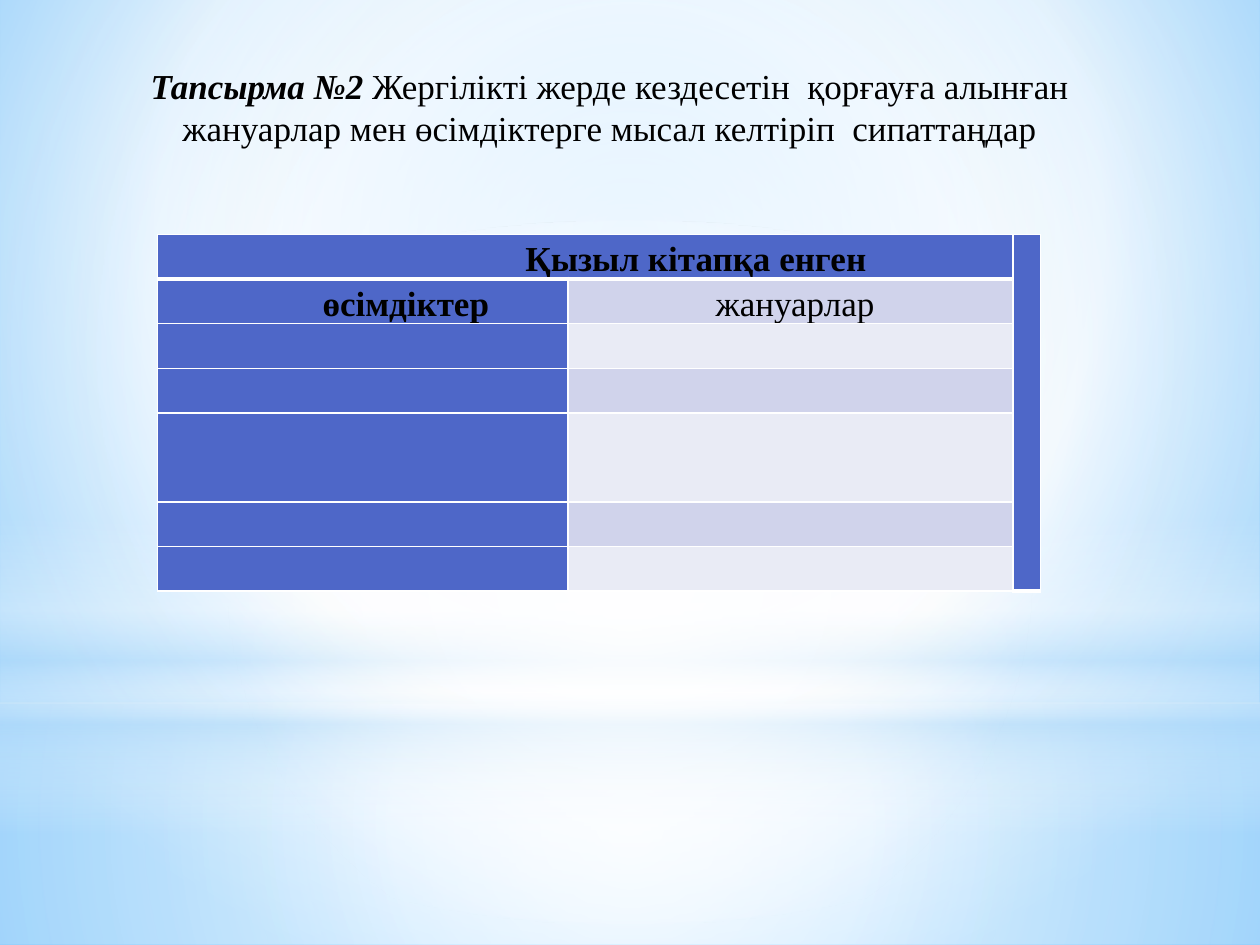
from dataclasses import dataclass

from lxml import etree
from pptx import Presentation
from pptx.dml.color import RGBColor
from pptx.enum.shapes import MSO_SHAPE
from pptx.enum.text import MSO_ANCHOR, MSO_AUTO_SIZE, PP_ALIGN
from pptx.oxml.ns import qn
from pptx.util import Inches, Pt

RECT, OVAL = MSO_SHAPE.RECTANGLE, MSO_SHAPE.OVAL
MIDDLE, CENTER, LEFT = MSO_ANCHOR.MIDDLE, PP_ALIGN.CENTER, PP_ALIGN.LEFT
GROW = MSO_AUTO_SIZE.SHAPE_TO_FIT_TEXT


@dataclass(frozen=True)
class Theme:
    font: str = "Times New Roman"
    size: int = 20
    text: str = "000000"
    white: str = "FFFFFF"
    haze: str = "B4DCFA"
    sky: str = "9ED5FF"
    deep_sky: str = "5BB9FF"
    header: str = "4E67C8"
    band_dark: str = "D0D3EB"
    band_light: str = "E9EBF5"
    grid_line: int = 1
    header_line: int = 3


THEME = Theme()
CENTRE_POINT = (50, 50, 50, 50)


def set_gradient(fill, holder, stops, focus=None):
    """Stops are (position %, colour, opacity %); without a focus it runs downwards."""
    fill.solid()
    solid = holder.find(".//" + qn("a:solidFill"))
    gradient = etree.Element(qn("a:gradFill"), rotWithShape="1")
    stop_list = etree.SubElement(gradient, qn("a:gsLst"))
    for position, color, opacity in stops:
        stop = etree.SubElement(stop_list, qn("a:gs"), pos=str(position * 1000))
        rgb = etree.SubElement(stop, qn("a:srgbClr"), val=color)
        if opacity < 100:
            etree.SubElement(rgb, qn("a:alpha"), val=str(opacity * 1000))
    if focus:
        circle = etree.SubElement(gradient, qn("a:path"), path="circle")
        sides = {side: str(share * 1000) for side, share in zip("ltrb", focus)}
        etree.SubElement(circle, qn("a:fillToRect"), **sides)
    else:
        etree.SubElement(gradient, qn("a:lin"), ang="5400000", scaled="0")
    solid.getparent().replace(solid, gradient)


def add_glow(slide, kind, top, height, stops, focus=CENTRE_POINT):
    glow = slide.shapes.add_shape(
        kind, 0, Inches(top), Inches(10), Inches(height))
    glow.shadow.inherit = False
    glow.line.fill.background()
    set_gradient(glow.fill, glow.element.spPr, stops, focus)


def add_text(paragraph, text, bold=False, italic=False, align=LEFT, spacing=None):
    paragraph.alignment = align
    if spacing:
        paragraph.line_spacing = spacing
    run = paragraph.add_run()
    run.text = text
    run.font.name, run.font.size = THEME.font, Pt(THEME.size)
    run.font.bold, run.font.italic = bold, italic
    run.font.color.rgb = RGBColor.from_string(THEME.text)


def style_cell(cell, color, bottom_width=THEME.grid_line):
    properties = cell._tc.get_or_add_tcPr()
    for side in "LRTB":
        width = bottom_width if side == "B" else THEME.grid_line
        line = etree.SubElement(properties, qn("a:ln" + side), w=str(Pt(width)))
        fill = etree.SubElement(line, qn("a:solidFill"))
        etree.SubElement(fill, qn("a:srgbClr"), val=THEME.white)
    cell.fill.solid()
    cell.fill.fore_color.rgb = RGBColor.from_string(color)
    cell.margin_left = cell.margin_right = Inches(0.07)
    cell.margin_top = cell.margin_bottom = 0


def label_cell(cell, text, indent, bold):
    cell.margin_left = Inches(0.07 + indent)
    add_text(cell.text_frame.paragraphs[0], text, bold=bold, spacing=1.15)


def add_backdrop(slide):
    white, haze = THEME.white, THEME.haze
    set_gradient(
        slide.background.fill, slide.element,
        [(0, THEME.sky, 100), (60, white, 100), (100, THEME.deep_sky, 100)],
        (20, 10, 20, 60))
    # Ground and sky
    add_glow(slide, RECT, 5.58, 1.92,
             [(0, white, 91), (37, white, 76), (100, haze, 79)])
    add_glow(slide, RECT, 0, 5.58,
             [(0, white, 89), (48, white, 62), (100, haze, 79)])
    # Horizon band
    add_glow(slide, RECT, 4.12, 2.5,
             [(0, white, 0), (29, white, 30), (45, haze, 40),
              (55, white, 26), (65, haze, 60), (100, white, 0)], focus=None)
    # Central light
    add_glow(slide, OVAL, 1.75, 5.58, [(0, white, 100), (56, white, 0)])


def add_red_book_table(slide):
    column_widths = (3.26, 3.53, 0.22)
    row_units = (1, 1, 1, 1, 2, 1, 1)
    table_height = 2.83
    table = slide.shapes.add_table(
        len(row_units), len(column_widths), Inches(1.25), Inches(1.86),
        Inches(sum(column_widths)), Inches(table_height)).table
    for column, width in zip(table.columns, column_widths):
        column.width = Inches(width)
    for row, units in zip(table.rows, row_units):
        row.height = Inches(table_height * units / sum(row_units))

    # Header across two columns, side strip down all rows
    table.cell(0, 0).merge(table.cell(0, 1))
    table.cell(0, 2).merge(table.cell(len(row_units) - 1, 2))
    for column in range(len(column_widths)):
        style_cell(table.cell(0, column), THEME.header, THEME.header_line)
    for row in range(1, len(row_units)):
        band = THEME.band_dark if row % 2 else THEME.band_light
        style_cell(table.cell(row, 0), THEME.header)
        style_cell(table.cell(row, 1), band)

    label_cell(table.cell(0, 0), "Қызыл кітапқа енген", 2.85, bold=True)
    label_cell(table.cell(1, 0), "өсімдіктер", 1.24, bold=True)
    label_cell(table.cell(1, 1), "жануарлар", 1.1, bold=False)


def add_task(slide):
    task = slide.shapes.add_textbox(
        Inches(0.51), Inches(0.46), Inches(8.66), Inches(0.77)).text_frame
    task.word_wrap = True
    task.auto_size = GROW
    task.vertical_anchor = MIDDLE
    line = task.paragraphs[0]
    add_text(line, "Тапсырма №2", bold=True, italic=True, align=CENTER)
    add_text(line, " Жергілікті жерде кездесетін  қорғауға алынған жануарлар "
                   "мен өсімдіктерге мысал келтіріп  сипаттаңдар", align=CENTER)


def main():
    presentation = Presentation()
    presentation.slide_width, presentation.slide_height = Inches(10), Inches(7.5)
    slide = presentation.slides.add_slide(presentation.slide_layouts[6])
    add_backdrop(slide)
    add_red_book_table(slide)
    add_task(slide)
    presentation.save("out.pptx")


if __name__ == "__main__":
    main()
